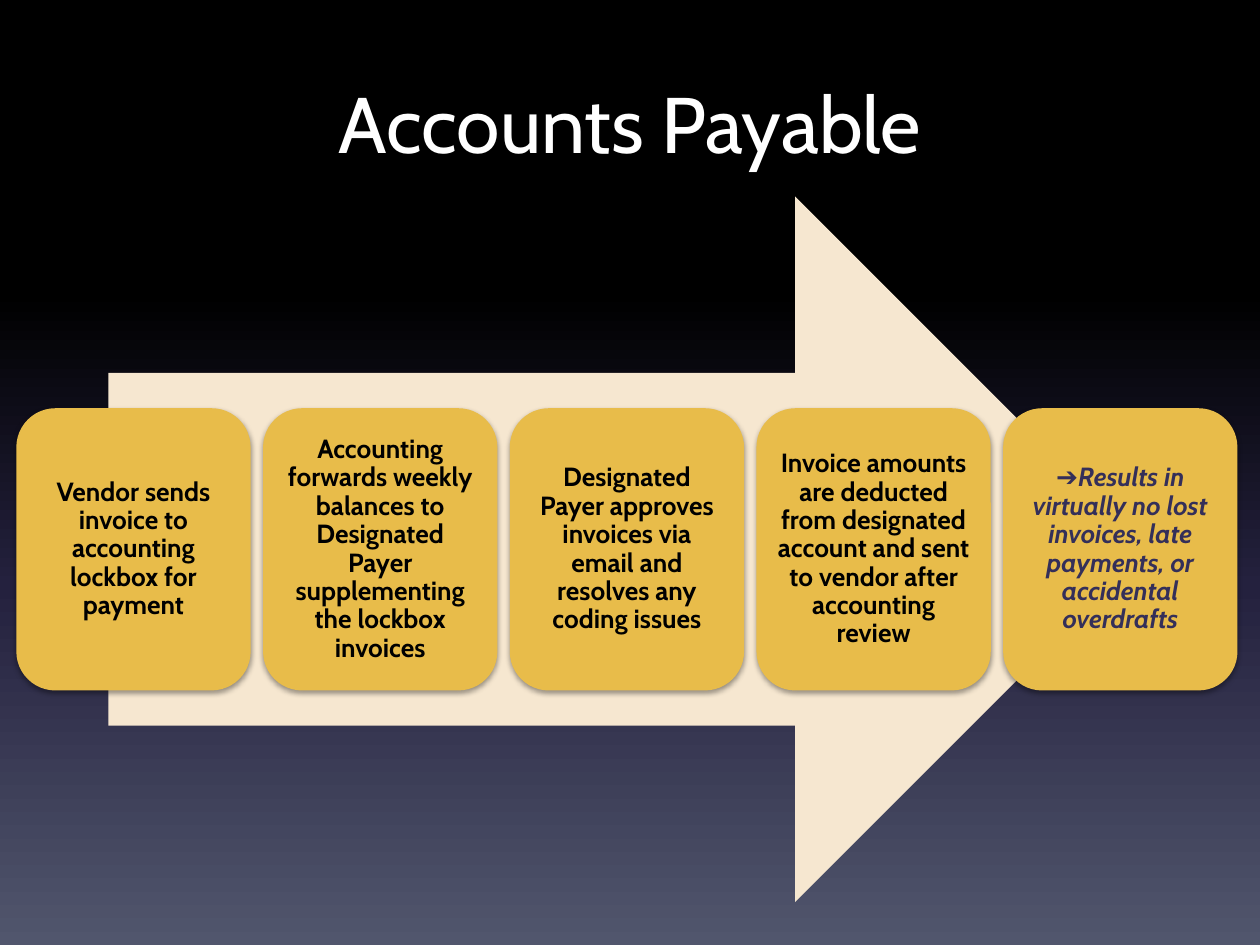
from pptx import Presentation
from pptx.dml.color import RGBColor
from pptx.enum.shapes import MSO_SHAPE
from pptx.enum.text import MSO_ANCHOR, PP_ALIGN
from pptx.oxml import parse_xml
from pptx.oxml.ns import nsdecls, qn
from pptx.util import Inches, Pt

BLACK = RGBColor(0x00, 0x00, 0x00)
WHITE = RGBColor(0xFF, 0xFF, 0xFF)
NIGHT = RGBColor(0x24, 0x21, 0x3E)
SLATE = RGBColor(0x51, 0x56, 0x6D)
CREAM = RGBColor(0xF6, 0xE7, 0xD0)
GOLD = RGBColor(0xE8, 0xBC, 0x4A)
INDIGO = RGBColor(0x34, 0x2F, 0x59)

STEPS = [
    "Vendor sends invoice to accounting lockbox for payment",
    "Accounting forwards weekly balances to Designated Payer "
    "supplementing the lockbox invoices",
    "Designated Payer approves invoices via email and resolves any coding issues",
    "Invoice amounts are deducted from designated account and sent to vendor "
    "after accounting review",
]
RESULT = "Results in virtually no lost invoices, late payments, or accidental overdrafts"


class Deck:
    """Style and current slide; lengths are cells of a 100 x 75 grid."""

    font = "Cabin"
    cell = Inches(0.1)

    def __init__(self):
        self.prs = Presentation()
        self.prs.slide_width = 100 * self.cell
        self.prs.slide_height = 75 * self.cell
        self.slide = self.prs.slides.add_slide(self.prs.slide_layouts[6])

    def box(self, *cells):
        return [round(c * self.cell) for c in cells]

    def background(self, stops):
        self.slide.background.fill.gradient()
        gradient = self.slide._element.find(".//" + qn("a:gradFill"))
        gradient.find(qn("a:lin")).set("ang", str(90 * 60000))
        gs_list = gradient.find(qn("a:gsLst"))
        for gs in list(gs_list):
            gs_list.remove(gs)
        for share, color in stops:
            gs_list.append(parse_xml(
                f'<a:gs {nsdecls("a")} pos="{share * 1000}">'
                f'<a:srgbClr val="{color}"/></a:gs>'))

    def style(self, run, size, color, bold=False, italic=False, font=None):
        f = run.font
        f.name, f.size, f.bold, f.italic = font or self.font, Pt(size), bold, italic
        f.color.rgb = color

    def title(self, text, *cells):
        tf = self.slide.shapes.add_textbox(*self.box(*cells)).text_frame
        tf.word_wrap = True
        tf.margin_top = Inches(0.09)
        tf.text = text
        p = tf.paragraphs[0]
        p.alignment = PP_ALIGN.CENTER
        self.style(p.runs[0], 45, WHITE)

    def shape(self, kind, color, *cells):
        sp = self.slide.shapes.add_shape(kind, *self.box(*cells))
        sp.shadow.inherit = False
        sp.fill.solid()
        sp.fill.fore_color.rgb = color
        sp.line.fill.background()
        return sp

    def soft_shadow(self, sp):
        sp._element.spPr.find(qn("a:effectLst")).append(parse_xml(
            f'<a:outerShdw {nsdecls("a")} blurRad="{Pt(3.1)}" dist="{Pt(1.6)}" '
            f'dir="{90 * 60000}" rotWithShape="0"><a:srgbClr val="{BLACK}">'
            '<a:alpha val="38000"/></a:srgbClr></a:outerShdw>'))

    def card(self, *cells):
        """Add a rounded card and return its empty paragraph."""
        sp = self.shape(MSO_SHAPE.ROUNDED_RECTANGLE, GOLD, *cells)
        self.soft_shadow(sp)
        tf = sp.text_frame
        tf.word_wrap = True
        tf.vertical_anchor = MSO_ANCHOR.MIDDLE
        tf.margin_left = tf.margin_right = Inches(0.06)
        tf.margin_top = tf.margin_bottom = Inches(0.06)
        p = tf.paragraphs[0]
        p.alignment = PP_ALIGN.CENTER
        p.line_spacing = 0.9
        return p

    def label(self, p, text, color, **look):
        r = p.add_run()
        r.text = text
        self.style(r, 15, color, bold=True, **look)


def main():
    deck = Deck()
    deck.background([(0, BLACK), (31, BLACK), (62, NIGHT), (100, SLATE)])
    deck.title("Accounts Payable", 5, 5, 90, 12.5)

    # Arrow behind the process
    deck.shape(MSO_SHAPE.RIGHT_ARROW, CREAM, 8.6, 15.6, 82.5, 56)

    # Five equal cards, left to right
    left, top, width, height, pitch = 1.3, 32.4, 18.6, 22.4, 19.58
    cards = [deck.card(left + i * pitch, top, width, height)
             for i in range(len(STEPS) + 1)]
    for p, step in zip(cards, STEPS):
        deck.label(p, step, BLACK)

    # Outcome in the last card
    deck.label(cards[-1], "➔", INDIGO, italic=True, font="Arial")
    deck.label(cards[-1], RESULT, INDIGO, italic=True)

    deck.prs.save("out.pptx")


if __name__ == "__main__":
    main()
